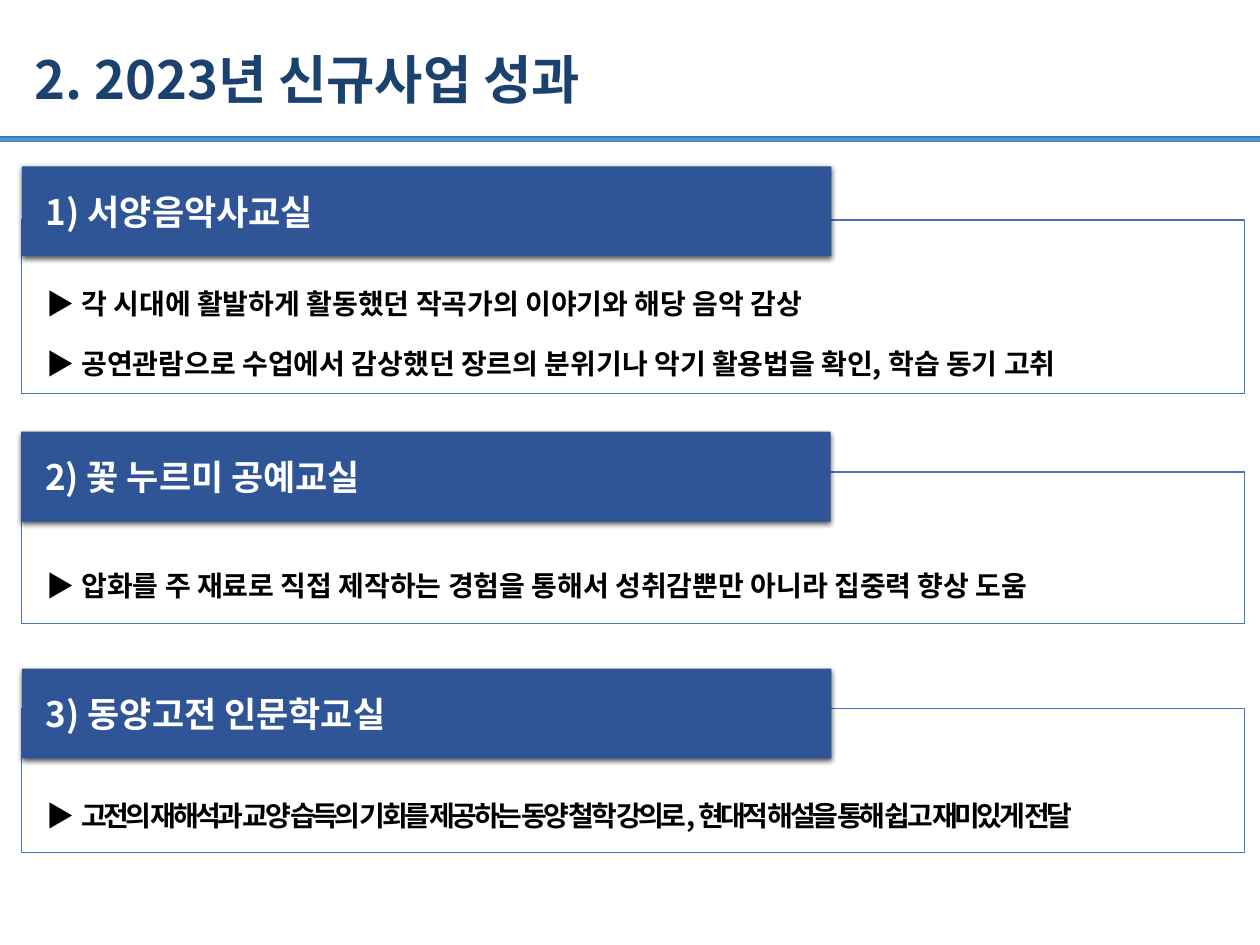
from lxml import etree
from pptx import Presentation
from pptx.dml.color import RGBColor
from pptx.enum.shapes import MSO_SHAPE
from pptx.enum.text import MSO_ANCHOR, PP_ALIGN
from pptx.oxml import parse_xml
from pptx.oxml.ns import nsdecls, qn
from pptx.util import Pt

RECTANGLE = MSO_SHAPE.RECTANGLE
TOP, MIDDLE = MSO_ANCHOR.TOP, MSO_ANCHOR.MIDDLE
LEFT, JUSTIFY = PP_ALIGN.LEFT, PP_ALIGN.JUSTIFY
FONT = "Noto Sans CJK KR"
NAVY, BLUE, LINE_BLUE = "1B416F", "2F5597", "4472C4"
WHITE, BLACK = "FFFFFF", "000000"
MARKER = "▶ "
PANEL_LEFT, PANEL_WIDTH = 18.7, 1048.3
HEADING_WIDTH, HEADING_HEIGHT = 694, 77

SECTIONS = [
    {"heading": "1) 서양음악사교실", "heading_at": (18.7, 142.6),
     "panel_top": 188.6, "panel_height": 149, "text_inset": 33.8, "spacing": 0,
     "lines": ["각 시대에 활발하게 활동했던 작곡가의 이야기와 해당 음악 감상",
               "공연관람으로 수업에서 감상했던 장르의 분위기나 악기 활용법을 확인, 학습 동기 고취"]},
    {"heading": "2) 꽃 누르미 공예교실", "heading_at": (18, 370.1),
     "panel_top": 404.6, "panel_height": 129.6, "text_inset": 59.8, "spacing": 0,
     "lines": ["압화를 주 재료로 직접 제작하는 경험을 통해서 성취감뿐만 아니라 집중력 향상 도움"]},
    {"heading": "3) 동양고전 인문학교실", "heading_at": (18.7, 573.1),
     "panel_top": 607, "panel_height": 123.8, "text_inset": 54, "spacing": -3,
     "lines": ["고전의 재해석과 교양 습득의 기회를 제공하는 동양 철학 강의로, "
               "현대적 해설을 통해 쉽고 재미있게 전달"]},
]


def color(value):
    return RGBColor.from_string(value)


def set_values(target, values):
    for name, value in values.items():
        setattr(target, name, value)


def set_frame(frame, anchor, left, top, right, bottom):
    set_values(frame, {
        "word_wrap": True, "vertical_anchor": anchor,
        "margin_left": Pt(left), "margin_top": Pt(top),
        "margin_right": Pt(right), "margin_bottom": Pt(bottom),
    })


def add_run(paragraph, text, size, font_color, spacing=0):
    run = paragraph.add_run()
    run.text = text
    set_values(run.font, {"name": FONT, "size": Pt(size), "bold": True})
    run.font.color.rgb = color(font_color)
    properties = run.font._element
    etree.SubElement(properties, qn("a:ea")).set("typeface", FONT)
    if spacing:
        properties.set("spc", str(spacing * 100))


def add_rectangle(slide, left, top, width, height, fill, line=None):
    shape = slide.shapes.add_shape(RECTANGLE, Pt(left), Pt(top), Pt(width), Pt(height))
    shape.shadow.inherit = False
    shape.fill.solid()
    shape.fill.fore_color.rgb = color(fill)
    if line:
        shape.line.color.rgb = color(line)
        shape.line.width = Pt(1)
    else:
        shape.line.fill.background()
    return shape


def add_shadow(shape):
    effects = shape._element.spPr.find(qn("a:effectLst"))
    effects.append(parse_xml(
        f'<a:outerShdw {nsdecls("a")} blurRad="{Pt(4.5)}" dist="{Pt(1.5)}" '
        f'dir="5400000" algn="t" rotWithShape="0"><a:srgbClr val="{BLACK}">'
        '<a:alpha val="63000"/></a:srgbClr></a:outerShdw>'))


def add_title(slide, text):
    box = slide.shapes.add_textbox(Pt(0), Pt(28), Pt(1080), Pt(78))
    set_frame(box.text_frame, MIDDLE, 29.4, 4, 8, 4)
    add_run(box.text_frame.paragraphs[0], text, 45, NAVY)


def add_title_rule(slide):
    bar = add_rectangle(slide, 0, 116.6, 1080, 5, LINE_BLUE)
    bar.fill.gradient()
    bar.fill.gradient_angle = 270
    stops = bar._element.spPr.find(qn("a:gradFill")).find(qn("a:gsLst"))
    for stop in list(stops):
        stops.remove(stop)
    for position, value in ((0, "3469B6"), (50, "559BDB"), (100, "448ACA")):
        stops.append(parse_xml(
            f'<a:gs {nsdecls("a")} pos="{position * 1000}"><a:srgbClr val="{value}"/></a:gs>'))


def add_panel(slide, section):
    panel = add_rectangle(slide, PANEL_LEFT, section["panel_top"], PANEL_WIDTH,
                          section["panel_height"], WHITE, LINE_BLUE)
    frame = panel.text_frame
    set_frame(frame, TOP, 21.6, section["text_inset"], 21.6, 0)
    for index, line in enumerate(section["lines"]):
        paragraph = frame.add_paragraph() if index else frame.paragraphs[0]
        set_values(paragraph, {"alignment": JUSTIFY, "line_spacing": 1.8})
        add_run(paragraph, MARKER, 24, BLACK)
        add_run(paragraph, line, 24, BLACK, section["spacing"])


def add_heading(slide, section):
    heading = add_rectangle(slide, *section["heading_at"], HEADING_WIDTH, HEADING_HEIGHT, BLUE)
    add_shadow(heading)
    set_frame(heading.text_frame, MIDDLE, 20.6, 3.6, 7.2, 3.6)
    paragraph = heading.text_frame.paragraphs[0]
    paragraph.alignment = LEFT
    add_run(paragraph, section["heading"], 30, WHITE)


def main():
    presentation = Presentation()
    set_values(presentation, {"slide_width": Pt(1080), "slide_height": Pt(810)})
    slide = presentation.slides.add_slide(presentation.slide_layouts[6])
    add_title_rule(slide)
    add_title(slide, "2. 2023년 신규사업 성과")
    for section in SECTIONS:
        add_panel(slide, section)
        add_heading(slide, section)
    presentation.save("out.pptx")


if __name__ == "__main__":
    main()
